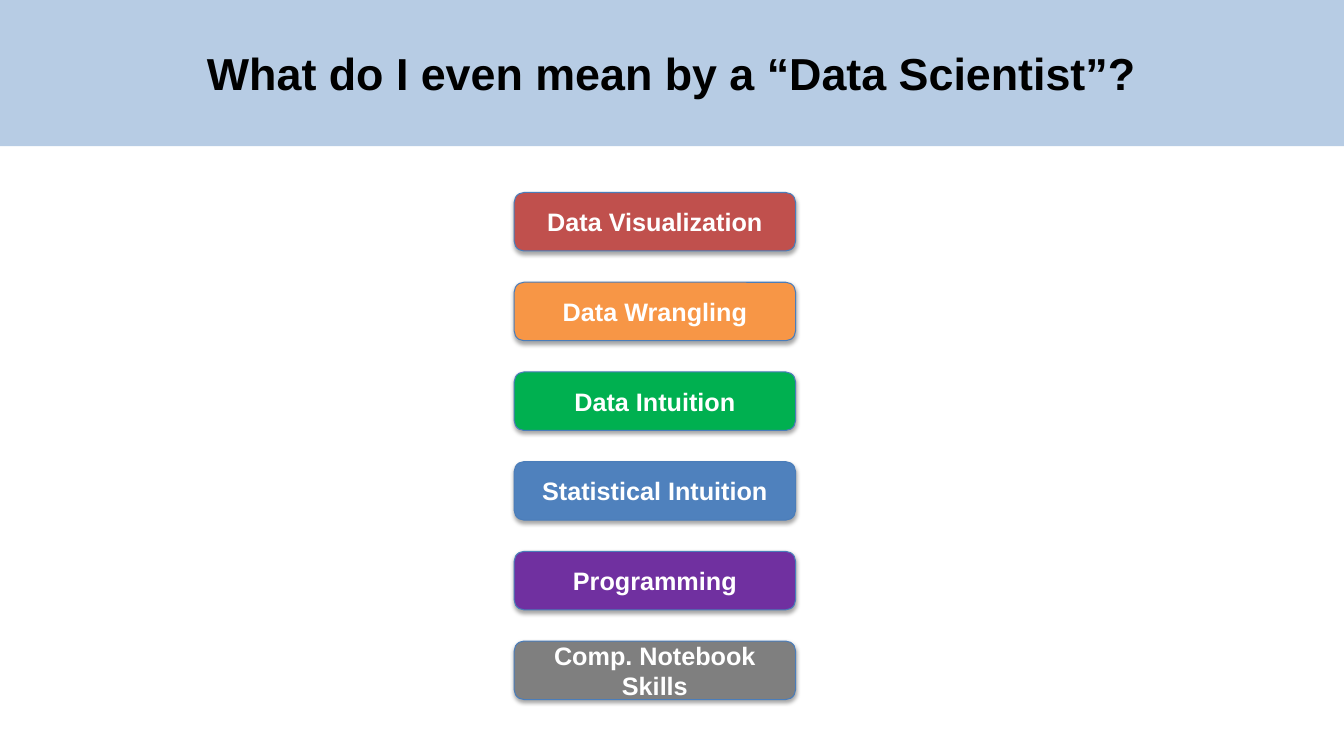
import pptx
import pptx.util
import pptx.dml.color
import pptx.enum.shapes
import pptx.enum.text
import pptx.oxml
import pptx.oxml.ns
from dataclasses import dataclass

PX = 9144


@dataclass(frozen=True)
class Theme:
    font: str = "Arial"
    title_size: int = 32
    skill_size: int = 18
    banner: str = "B7CCE4"
    title_text: str = "000000"
    skill_text: str = "FFFFFF"
    outline: str = "4A7DBA"
    red: str = "C0504D"
    orange: str = "F79646"
    green: str = "00B050"
    blue: str = "4F81BD"
    purple: str = "7030A0"
    gray: str = "7F7F7F"


theme = Theme()
rgb = pptx.dml.color.RGBColor.from_string
SHAPES = pptx.enum.shapes.MSO_SHAPE


def add_box(slide, kind, bounds, fill, text, size, color):
    shape = slide.shapes.add_shape(kind, *(length * PX for length in bounds))
    shape.shadow.inherit = False
    shape.fill.solid()
    shape.fill.fore_color.rgb = rgb(fill)
    shape.line.fill.background()
    frame = shape.text_frame
    frame.word_wrap = True
    frame.vertical_anchor = pptx.enum.text.MSO_ANCHOR.MIDDLE
    paragraph = frame.paragraphs[0]
    paragraph.text = text
    paragraph.alignment = pptx.enum.text.PP_ALIGN.CENTER
    paragraph.font.name = theme.font
    paragraph.font.size = pptx.util.Pt(size)
    paragraph.font.bold = True
    paragraph.font.color.rgb = rgb(color)
    return shape


def add_drop_shadow(shape):
    effects = shape._element.spPr.find(pptx.oxml.ns.qn("a:effectLst"))
    effects.append(pptx.oxml.parse_xml(
        f'<a:outerShdw {pptx.oxml.ns.nsdecls("a")} blurRad="40000" dist="23000" '
        'dir="5400000" rotWithShape="0"><a:srgbClr val="000000">'
        '<a:alpha val="34000"/></a:srgbClr></a:outerShdw>'))


presentation = pptx.Presentation()
presentation.slide_width = 1333 * PX
presentation.slide_height = 750 * PX
slide = presentation.slides.add_slide(presentation.slide_layouts[6])

add_box(slide, SHAPES.RECTANGLE, (0, 0, 1333, 145), theme.banner,
        "What do I even mean by a “Data Scientist”?", theme.title_size, theme.title_text)

skills = [
    ("Data Visualization", theme.red),
    ("Data Wrangling", theme.orange),
    ("Data Intuition", theme.green),
    ("Statistical Intuition", theme.blue),
    ("Programming", theme.purple),
    ("Comp. Notebook Skills", theme.gray),
]
first_top, pitch = 191, 89
for index, (skill, fill) in enumerate(skills):
    button = add_box(slide, SHAPES.ROUNDED_RECTANGLE,
                     (510, first_top + index * pitch, 279, 58),
                     fill, skill, theme.skill_size, theme.skill_text)
    button.line.color.rgb = rgb(theme.outline)
    button.line.width = pptx.util.Pt(0.75)
    add_drop_shadow(button)

presentation.save("out.pptx")
